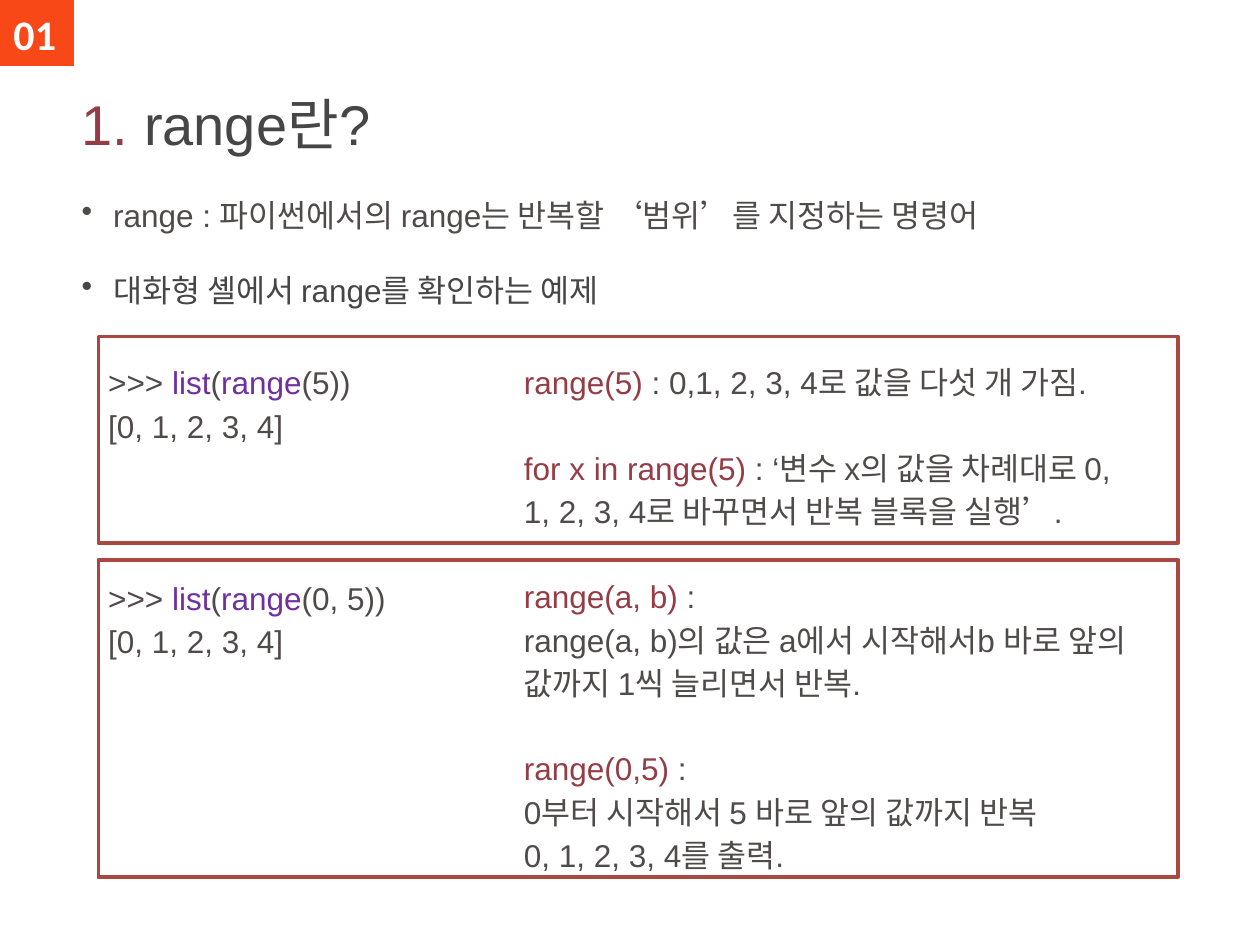
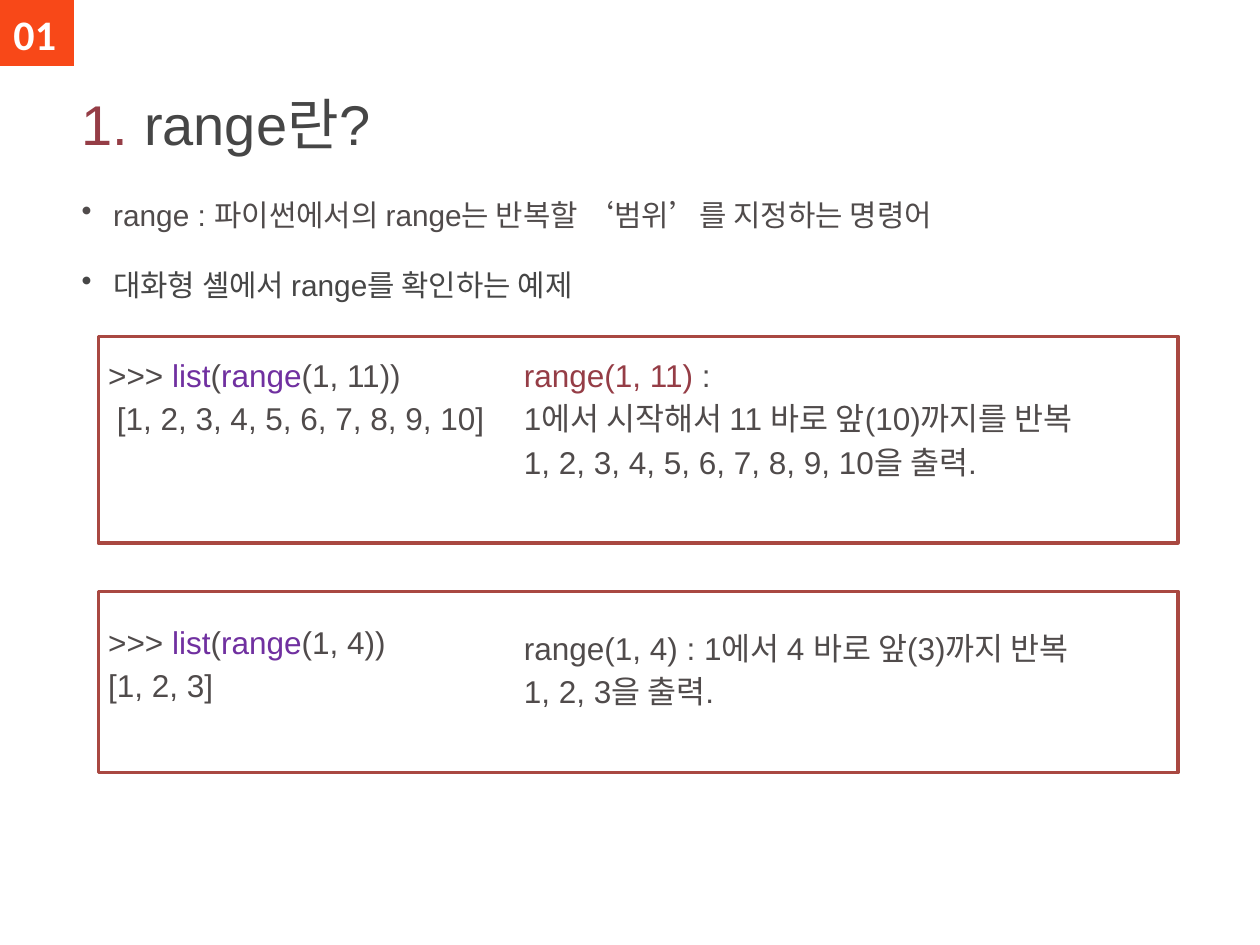
from lxml import etree
from pptx import Presentation
from pptx.dml.color import RGBColor
from pptx.enum.shapes import MSO_SHAPE as SHAPE
from pptx.enum.text import MSO_ANCHOR as ANCHOR, PP_ALIGN as ALIGN
from pptx.oxml.ns import qn
from pptx.util import Pt

ORANGE, FRAME = "F84818", "A94841"
RED, PURPLE = "953D46", "7030A0"
TITLE, TEXT, WHITE = "464646", "504B4B", "FFFFFF"
LEFT, CODE_INDENT, NOTE_LEFT = 39.6, 15, 292.3
LINE = 23.8  # height of one line of code or notes


def color(value):
    return RGBColor.from_string(value)


def code(call, result):
    """Runs of a shell prompt that lists a range, and its result."""
    return [(">>> ", TEXT), ("list", PURPLE), ("(", TEXT), ("range", PURPLE),
            (f"({call}))\n{result}", TEXT)]


def note(term, text):
    return [(term, RED), (f" {text}", TEXT)]


class Deck:
    def __init__(self):
        self.prs = Presentation()
        self.prs.slide_width, self.prs.slide_height = Pt(720), Pt(540)
        self.s = None

    def add_slide(self, bullet_size, bullet_gap):
        self.s = self.prs.slides.add_slide(self.prs.slide_layouts[6])
        self.text(LEFT, 29.5, 638.6, 63.4, [(0, [("1. ", RED), ("range란?", TITLE)])],
                  size=32, anchor=ANCHOR.BOTTOM)
        self.bullets(bullet_size, bullet_gap)
        self.box(0, 0, 42.3, 37.7, SHAPE.FLOWCHART_PROCESS, fill=ORANGE)
        sp = self.text(-8.6, 1.4, 56.9, 36, [(0, [("01", WHITE)])], size=24, font="Calibri")
        p = sp.text_frame.paragraphs[0]
        p.alignment, p.font.bold = ALIGN.CENTER, True

    def text(self, x, y, w, h, paragraphs, size=18, font="Arial", spacing=1.0,
             anchor=ANCHOR.TOP, indent=0):
        """Add paragraphs given as (space before, [(text, colour), ...])."""
        sp = self.s.shapes.add_textbox(Pt(x), Pt(y), Pt(w), Pt(h))
        tf = sp.text_frame
        tf.word_wrap, tf.vertical_anchor = True, anchor
        tf.margin_left = Pt(7.2 + indent)
        for i, (before, runs) in enumerate(paragraphs):
            p = tf.add_paragraph() if i else tf.paragraphs[0]
            p.line_spacing = spacing
            if before:
                p.space_before = Pt(before)
            p.font.name, p.font.size = font, Pt(size)
            for content, shade in runs:
                for j, line in enumerate(content.split("\n")):
                    if j:
                        p.add_line_break()
                    r = p.add_run()
                    r.text = line
                    r.font.name, r.font.size = font, Pt(size)
                    r.font.color.rgb = color(shade)
        return sp

    def bullets(self, size, gap):
        sp = self.text(LEFT, 106.6, 637.9, 77, [
            (0, [("range : 파이썬에서의 range는 반복할 ‘범위’를 지정하는 명령어", TEXT)]),
            (gap, [("대화형 셸에서 range를 확인하는 예제", TITLE)]),
        ], size=size, spacing=1.1)
        for p in sp.text_frame.paragraphs:
            pPr = p._p.get_or_add_pPr()
            pPr.set("marL", str(Pt(18)))
            pPr.set("indent", str(-Pt(18)))
            bullet = etree.Element(qn("a:buChar"), char="•")
            pPr.find(qn("a:defRPr")).addprevious(bullet)

    def box(self, x, y, w, h, kind=SHAPE.RECTANGLE, fill=None, line=None):
        sp = self.s.shapes.add_shape(kind, Pt(x), Pt(y), Pt(w), Pt(h))
        sp.shadow.inherit = False
        if fill:
            sp.fill.solid()
            sp.fill.fore_color.rgb = color(fill)
        else:
            sp.fill.background()
        if line:
            sp.line.color.rgb = color(line)
            sp.line.width = Pt(2)
        else:
            sp.line.fill.background()

    def examples(self, y, codes, notes, frames):
        """Add the code column, the notes column and the frames around them."""
        self.text(LEFT, y, 284.4, 244.8, codes, spacing=1.15, indent=CODE_INDENT)
        self.text(NOTE_LEFT, y, 367.2, 300, notes, spacing=1.15)
        for top, height in frames:
            self.box(56.2, top, 617, height, line=FRAME)


def main():
    deck = Deck()
    deck.add_slide(18, 18.9)
    deck.examples(
        200.9,
        [(0, code("5", "[0, 1, 2, 3, 4]")), (73.4, code("0, 5", "[0, 1, 2, 3, 4]"))],
        [(0, note("range(5)", ": 0,1, 2, 3, 4로 값을 다섯 개 가짐.")),
         (LINE, note("for x in range(5)", ": ‘변수 x의 값을 차례대로 0, 1, 2, 3, 4로 "
                     "바꾸면서 반복 블록을 실행’.")),
         (LINE, note("range(a, b)", ":\nrange(a, b)의 값은 a에서 시작해서b 바로 "
                     "앞의 값까지 1씩 늘리면서 반복.")),
         (LINE, note("range(0,5)", ":\n0부터 시작해서 5 바로 앞의 값까지 반복\n"
                     "0, 1, 2, 3, 4를 출력."))],
        [(192.2, 118), (319.9, 181.4)])

    deck.add_slide(17, 17.6)
    deck.examples(
        196.5,
        [(0, code("1, 11", " [1, 2, 3, 4, 5, 6, 7, 8, 9, 10]")),
         (103.1, code("1, 4", "[1, 2, 3]"))],
        [(0, note("range(1, 11)", ":\n1에서 시작해서 11 바로 앞(10)까지를 반복\n"
                  "1, 2, 3, 4, 5, 6, 7, 8, 9, 10을 출력.")),
         (81.4, [("range(1, 4) : 1에서 4 바로 앞(3)까지 반복\n1, 2, 3을 출력.", TEXT)])],
        [(192.2, 118), (337.9, 103.5)])
    deck.prs.save("out.pptx")


if __name__ == "__main__":
    main()
